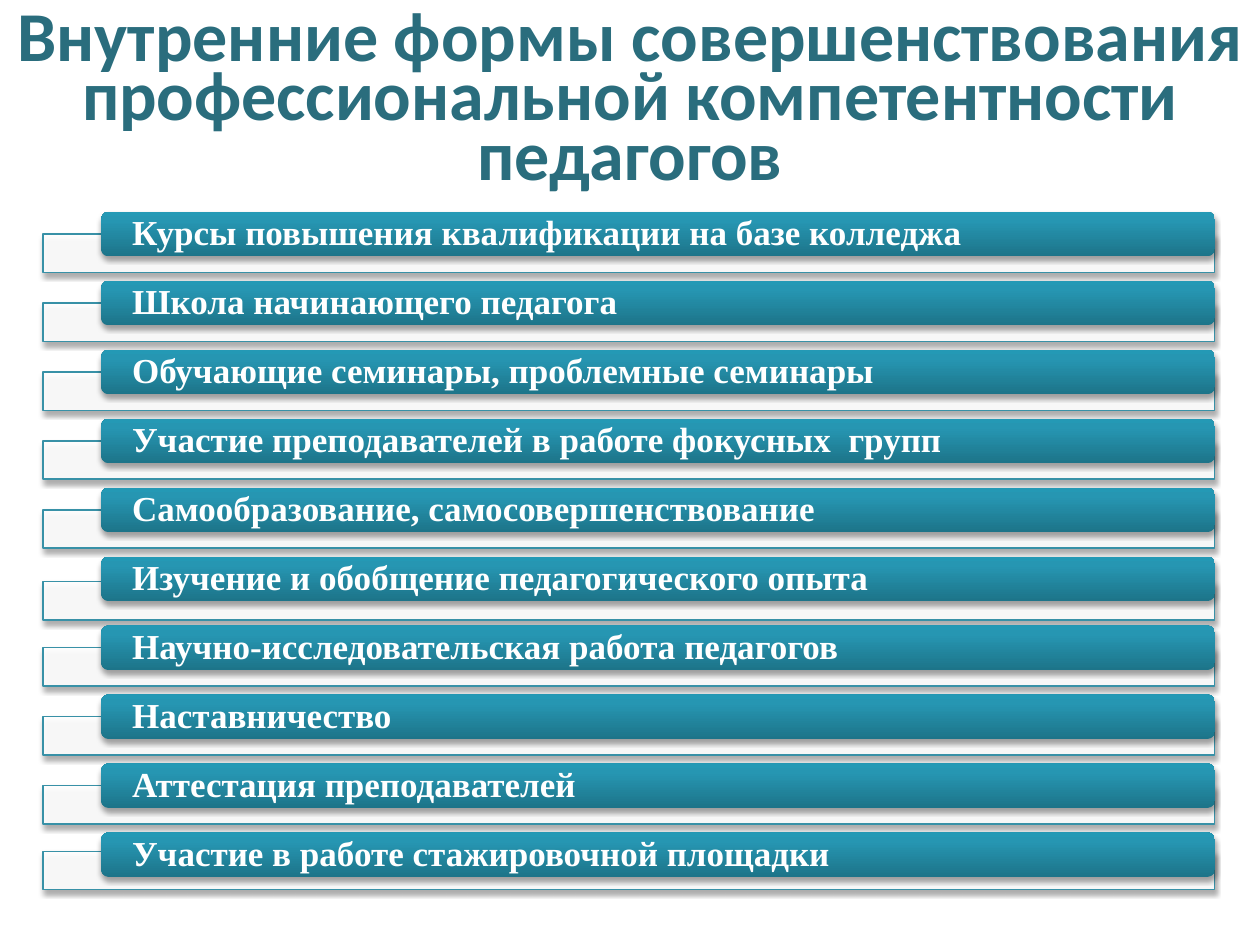
from dataclasses import dataclass

from lxml import etree
from pptx import Presentation
from pptx.dml.color import RGBColor
from pptx.enum.shapes import MSO_SHAPE
from pptx.enum.text import MSO_ANCHOR, PP_ALIGN
from pptx.oxml.ns import qn
from pptx.util import Cm, Pt

RECT = MSO_SHAPE.RECTANGLE
ROUND_RECT = MSO_SHAPE.ROUNDED_RECTANGLE
MIDDLE = MSO_ANCHOR.MIDDLE
CENTER, LEFT = PP_ALIGN.CENTER, PP_ALIGN.LEFT


@dataclass(frozen=True)
class Theme:
    title_color: str = "2A6D7D"
    title_font: str = "Calibri"
    title_size: int = 40
    title_spacing: int = 34
    bar_stops: tuple = ((0, "1D7489"), (80, "2696B2"), (100, "2499B5"))
    bar_text: str = "FFFFFF"
    bar_font: str = "Times New Roman"
    bar_size: int = 20
    tray_fill: str = "FFFFFF"
    tray_opacity: int = 90
    tray_line: str = "3891A7"
    shadow: str = "000000"
    shadow_opacity: int = 35


THEME = Theme()
TITLE = "Внутренние формы совершенствования профессиональной компетентности педагогов"
FORMS = [
    "Курсы повышения квалификации на базе колледжа",
    "Школа начинающего педагога",
    "Обучающие семинары, проблемные семинары",
    "Участие преподавателей в работе фокусных  групп",
    "Самообразование, самосовершенствование",
    "Изучение и обобщение педагогического опыта",
    "Научно-исследовательская работа педагогов",
    "Наставничество",
    "Аттестация преподавателей",
    "Участие в работе стажировочной площадки",
]
FIRST_TOP, PITCH = 4.27, 1.39
TRAY_DROP = 0.45
SPECIAL_DROPS = {5: 0.51, 9: 0.38}


def add_color(parent, color, opacity=None):
    clr = etree.SubElement(parent, qn("a:srgbClr"), val=color)
    if opacity is not None:
        etree.SubElement(clr, qn("a:alpha"), val=str(opacity * 1000))


def add_shadow(sp):
    sp.shadow.inherit = False
    effects = sp._element.spPr.find(qn("a:effectLst"))
    outer = etree.SubElement(effects, qn("a:outerShdw"), blurRad=str(Pt(3.1)),
                             dist=str(Pt(1.8)), dir="5400000", rotWithShape="0")
    add_color(outer, THEME.shadow, THEME.shadow_opacity)


def fill_gradient(sp, stops):
    sp.fill.gradient()
    sp.fill.gradient_angle = 90
    stop_list = sp._element.spPr.find(qn("a:gradFill")).find(qn("a:gsLst"))
    for stop in list(stop_list):
        stop_list.remove(stop)
    for position, color in stops:
        add_color(etree.SubElement(stop_list, qn("a:gs"), pos=str(position * 1000)), color)


def set_text(sp, text, font, size, color, align, spacing):
    tf = sp.text_frame
    tf.word_wrap = True
    tf.vertical_anchor = MIDDLE
    p = tf.paragraphs[0]
    p.text = text
    p.alignment = align
    p.line_spacing = spacing
    r = p.runs[0]
    r.font.name = font
    r.font.size = Pt(size)
    r.font.bold = True
    r.font.color.rgb = RGBColor.from_string(color)


def add_title(slide):
    sp = slide.shapes.add_textbox(Cm(0), Cm(0.53), Cm(25.4), Cm(3.18))
    set_text(sp, TITLE, THEME.title_font, THEME.title_size, THEME.title_color,
             CENTER, Pt(THEME.title_spacing))


def add_tray(slide, top):
    sp = slide.shapes.add_shape(RECT, Cm(0.87), Cm(top), Cm(23.62), Cm(0.77))
    sp.fill.solid()
    sp.fill.fore_color.rgb = RGBColor.from_string(THEME.tray_fill)
    clr = sp._element.spPr.find(qn("a:solidFill"))[0]
    etree.SubElement(clr, qn("a:alpha"), val=str(THEME.tray_opacity * 1000))
    sp.line.color.rgb = RGBColor.from_string(THEME.tray_line)
    sp.line.width = Pt(0.75)
    add_shadow(sp)


def add_bar(slide, top, text):
    sp = slide.shapes.add_shape(ROUND_RECT, Cm(2.04), Cm(top), Cm(22.45), Cm(0.9))
    fill_gradient(sp, THEME.bar_stops)
    sp.line.fill.background()
    add_shadow(sp)
    tf = sp.text_frame
    tf.margin_left = tf.margin_right = Cm(0.58)
    tf.margin_top = tf.margin_bottom = 0
    set_text(sp, text, THEME.bar_font, THEME.bar_size, THEME.bar_text, LEFT, 0.9)


def main():
    prs = Presentation()
    prs.slide_width, prs.slide_height = Cm(25.4), Cm(19.05)
    slide = prs.slides.add_slide(prs.slide_layouts[6])
    add_title(slide)
    for i, text in enumerate(FORMS):
        top = FIRST_TOP + i * PITCH
        add_tray(slide, top + SPECIAL_DROPS.get(i, TRAY_DROP))
        add_bar(slide, top, text)
    prs.save("out.pptx")


if __name__ == "__main__":
    main()
